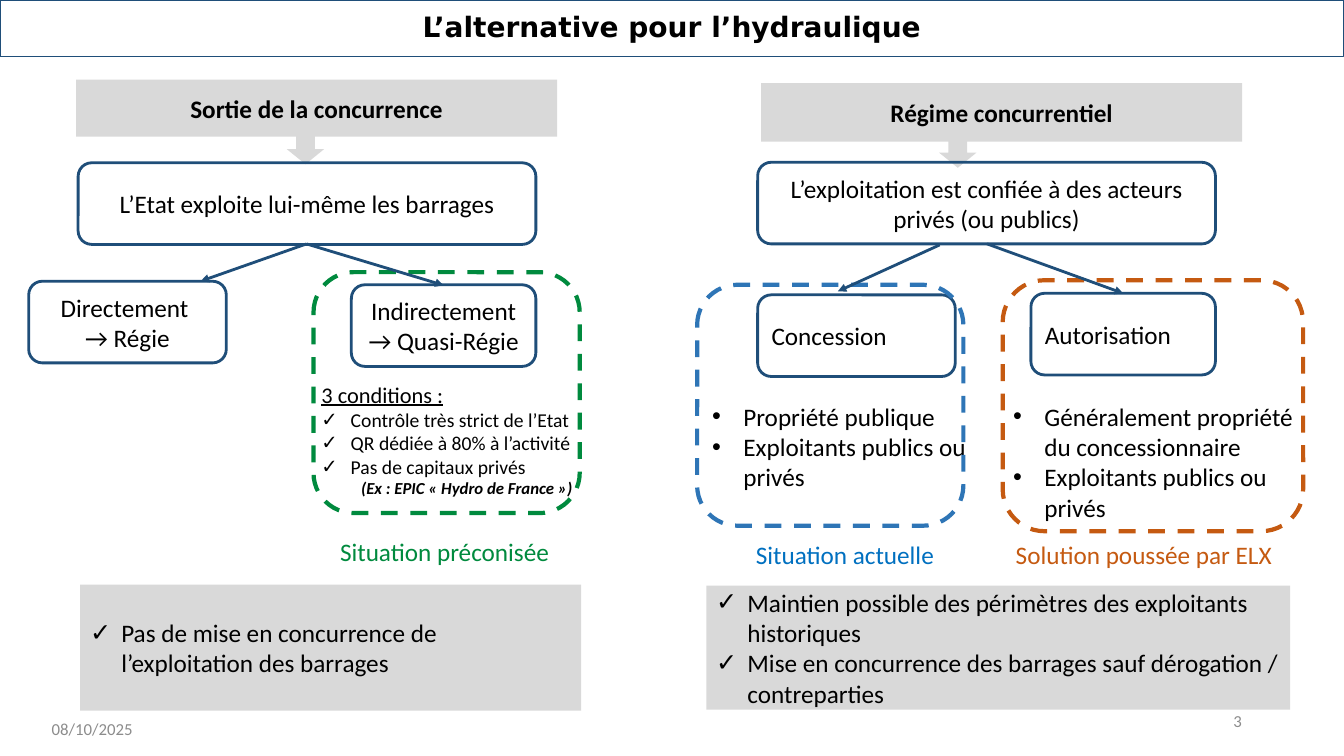
"""Build the slide that sets out the two options for hydro power."""
from dataclasses import dataclass

from lxml import etree
from pptx import Presentation
from pptx import util as u
from pptx.dml.color import RGBColor
from pptx.enum import dml, shapes, text
from pptx.oxml import ns

WIDE, HIGH = u.Inches(13.33), u.Inches(7.5)
COLS, ROWS = 133.3, 75
NAVY, GREY, BLACK, PALE = "1F4E79", "D9D9D9", "000000", "8C8C8C"
GREEN, BLUE, SKY, RUST = "008A3E", "2E75B6", "0070C0", "C55A11"
RECT = shapes.MSO_SHAPE.RECTANGLE
ROUND = shapes.MSO_SHAPE.ROUNDED_RECTANGLE
DOWN = shapes.MSO_SHAPE.DOWN_ARROW
MID, TOP = text.MSO_ANCHOR.MIDDLE, text.MSO_ANCHOR.TOP
ALIGN = {"l": text.PP_ALIGN.LEFT, "c": text.PP_ALIGN.CENTER, "r": text.PP_ALIGN.RIGHT}


@dataclass(frozen=True)
class Run:
    words: str
    size: int = 18
    ink: str = BLACK
    bold: bool = False
    slant: bool = False
    under: bool = False
    font: str = "Calibri"


@dataclass(frozen=True)
class Para:
    runs: tuple[Run, ...]
    align: str = "c"
    mark: str = ""
    left: float = 0
    hang: float = 0


@dataclass(frozen=True)
class Box:
    x: float
    y: float
    w: float
    h: float
    paras: tuple[Para, ...] = ()
    form: shapes.MSO_SHAPE = ROUND
    fill: str = ""
    line: str = ""
    thick: float = 2
    dash: bool = False
    hold: text.MSO_ANCHOR = MID


@dataclass(frozen=True)
class Link:
    x: float
    y: float
    to_x: float
    to_y: float


def col(n: float) -> int:
    return round(WIDE * n / COLS)


def row(n: float) -> int:
    return round(HIGH * n / ROWS)


def tint(code: str) -> RGBColor:
    return RGBColor.from_string(code)


def plain(words: str, align: str = "c", **look) -> Para:
    return Para((Run(words, **look),), align)


def item(words: str, mark: str = "✓", size: int = 18,
         left: float = 3.1, hang: float = 3.1) -> Para:
    return Para((Run(words, size),), "l", mark, left, hang)


def node(x: float, y: float, w: float, *lines: str, align: str = "c") -> Box:
    return Box(x, y, w, 8.1, tuple(plain(s, align) for s in lines), line=NAVY)


def band(x: float, y: float, w: float, h: float, *paras: Para) -> Box:
    return Box(x, y, w, h, paras, RECT, GREY)


def block(x: float, y: float, w: float, h: float, *paras: Para) -> Box:
    return Box(x, y, w, h, paras, RECT)


def frame(x: float, y: float, w: float, h: float, ink: str) -> Box:
    return Box(x, y, w, h, line=ink, thick=3, dash=True)


def label(x: float, y: float, w: float, words: str, ink: str) -> Box:
    return Box(x, y, w, 3.5, (plain(words, ink=ink),), RECT, hold=TOP)


def foot(x: float, y: float, words: str, align: str) -> Box:
    return Box(x, y, 30, 4, (plain(words, align, size=12, ink=PALE),), RECT)


BOXES = (
    foot(4.15, 70.3, "08/10/2025", "l"),
    foot(94.15, 69.5, "3", "r"),
    band(7.55, 7.9, 47.7, 5.65, plain("Sortie de la concurrence", bold=True)),
    Box(28.45, 13.3, 3.7, 3, form=DOWN, fill=GREY),
    band(75.5, 8.25, 47.7, 5.8, plain("Régime concurrentiel", bold=True)),
    Box(93.15, 13.65, 3.7, 3, form=DOWN, fill=GREY),
    node(7.75, 16.15, 45.4, "L’Etat exploite lui-même les barrages"),
    node(2.85, 27.9, 19.6, "Directement ", "→ Régie"),
    node(34.85, 28.25, 18.3, "Indirectement", "→ Quasi-Régie"),
    block(29.9, 37.6, 32.8, 12,
          Para((Run("3 conditions :", 16, under=True),), "l", left=1),
          *(item(s, size=14, left=3.9, hang=2.9) for s in (
              "Contrôle très strict de l’Etat",
              "QR dédiée à 80% à l’activité",
              "Pas de capitaux privés")),
          plain("(Ex : EPIC « Hydro de France »)", size=12, bold=True, slant=True)),
    node(75.15, 16.1, 45.4,
         "L’exploitation est confiée à des acteurs privés (ou publics)"),
    node(75.15, 29.25, 19.6, "Concession", align="l"),
    node(102.25, 29.1, 18.3, "Autorisation", align="l"),
    block(69.65, 39.1, 27.7, 10.4,
          item("Propriété publique", "•"),
          item("Exploitants publics ou privés", "•")),
    block(99.5, 39.1, 31.5, 13.4,
          item("Généralement propriété du concessionnaire", "•"),
          item("Exploitants publics ou privés", "•")),
    band(7.95, 58, 49.7, 12.5,
         item("Pas de mise en concurrence de l’exploitation des barrages")),
    band(70.05, 58.1, 57.9, 12.3,
         item("Maintien possible des périmètres des exploitants historiques"),
         item("Mise en concurrence des barrages sauf dérogation / contreparties")),
    frame(69.15, 28.25, 26.4, 23.9, BLUE),
    label(69.9, 53.5, 27.8, "Situation actuelle", SKY),
    frame(99.45, 27.8, 29.8, 24.9, RUST),
    label(97.6, 53.5, 31.7, "Solution poussée par ELX", RUST),
    label(27.3, 53.2, 33.6, "Situation préconisée", GREEN),
    frame(31.1, 27, 26.4, 23.9, GREEN),
)
LINKS = (
    Link(30.4, 24.2, 19.9, 27.9),
    Link(30.4, 24.2, 44, 28.3),
    Link(93.2, 24.3, 83.1, 28.9),
    Link(97.9, 24.2, 111.4, 29.1),
)


def write(body, paras: tuple[Para, ...], hold: text.MSO_ANCHOR) -> None:
    body.word_wrap = True
    body.vertical_anchor = hold
    body.margin_top = body.margin_bottom = 0
    for i, para in enumerate(paras):
        p = body.add_paragraph() if i else body.paragraphs[0]
        p.alignment = ALIGN[para.align]
        props = p._p.get_or_add_pPr()
        if para.left:
            props.set("marL", str(col(para.left)))
            props.set("indent", str(-col(para.hang)))
        if para.mark:
            etree.SubElement(props, ns.qn("a:buFont")).set("typeface", "Arial")
            etree.SubElement(props, ns.qn("a:buChar")).set("char", para.mark)
        for run in para.runs:
            r = p.add_run()
            r.text = run.words
            face = r.font
            face.name, face.size = run.font, u.Pt(run.size)
            face.bold, face.italic, face.underline = run.bold, run.slant, run.under
            face.color.rgb = tint(run.ink)


def paint(shape, box: Box) -> None:
    if box.fill:
        shape.fill.solid()
        shape.fill.fore_color.rgb = tint(box.fill)
    else:
        shape.fill.background()
    if box.line:
        shape.line.color.rgb = tint(box.line)
        shape.line.width = u.Pt(box.thick)
        if box.dash:
            shape.line.dash_style = dml.MSO_LINE.DASH
    else:
        shape.line.fill.background()
    if box.paras:
        write(shape.text_frame, box.paras, box.hold)


def draw(slide, box: Box) -> None:
    shape = slide.shapes.add_shape(box.form, col(box.x), row(box.y), col(box.w), row(box.h))
    shape.shadow.inherit = False
    paint(shape, box)


def join(slide, link: Link) -> None:
    line = slide.shapes.add_connector(
        shapes.MSO_CONNECTOR.STRAIGHT,
        col(link.x), row(link.y), col(link.to_x), row(link.to_y))
    line.line.color.rgb = tint(NAVY)
    line.line.width = u.Pt(2)
    props = line._element.spPr
    etree.SubElement(props.find(ns.qn("a:ln")), ns.qn("a:tailEnd")).set("type", "triangle")
    etree.SubElement(props, ns.qn("a:effectLst"))


def main() -> None:
    deck = Presentation()
    deck.slide_width, deck.slide_height = WIDE, HIGH
    slide = deck.slides.add_slide(deck.slide_layouts[5])
    head = slide.shapes.title
    head.left, head.top, head.width, head.height = 0, 0, WIDE, row(5.6)
    name = plain("L’alternative pour l’hydraulique", size=20, bold=True, font="DejaVu Sans")
    paint(head, Box(0, 0, COLS, 5.6, (name,), line=NAVY, thick=0.75))
    head.text_frame.paragraphs[0].line_spacing = 0.9
    for box in BOXES:
        draw(slide, box)
    for link in LINKS:
        join(slide, link)
    deck.save("out.pptx")


if __name__ == "__main__":
    main()
